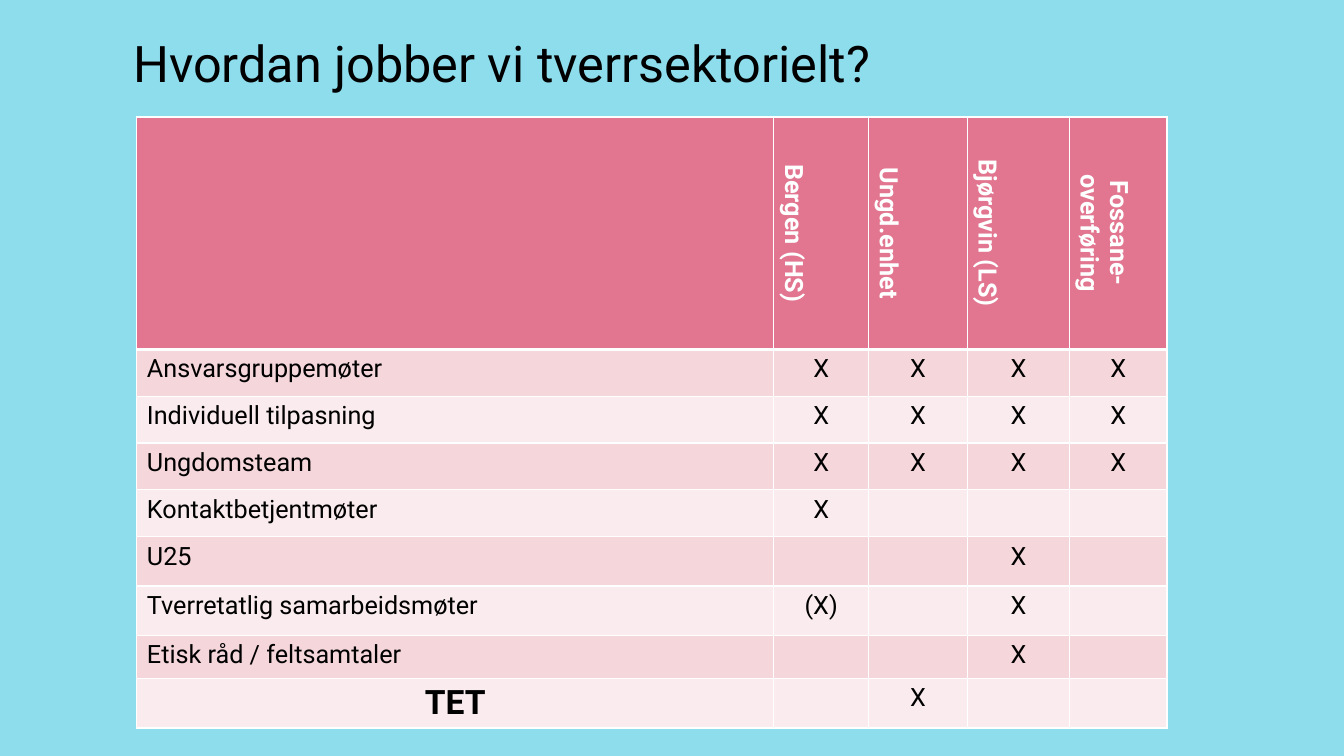
"""Build a slide with a table of cross-sector work by unit."""
from dataclasses import dataclass

from lxml import etree
from pptx import Presentation
from pptx.dml.color import RGBColor
from pptx.enum.text import MSO_ANCHOR, MSO_AUTO_SIZE, PP_ALIGN
from pptx.oxml.ns import qn
from pptx.util import Cm, Pt

LEFT, CENTER = PP_ALIGN.LEFT, PP_ALIGN.CENTER
TOP = MSO_ANCHOR.TOP
NO_AUTOFIT = MSO_AUTO_SIZE.NONE

FONT = "Roboto"
BLACK, WHITE = "000000", "FEFFFF"
BACKGROUND, HEADER = "8EDDED", "E2758F"
BANDS = ("F4D6DB", "FAECEE")
UNITS = ("", "Bergen (HS)", "Ungd.enhet", "Bjørgvin (LS)", "Fossane-overføring")
COLUMN_WIDTHS = (16.05, 2.39, 2.49, 2.57, 2.46)
HEADER_HEIGHT = 4.72


@dataclass
class Measure:
    label: str
    marks: tuple
    height: float = 1.18
    size: int = 18
    bold: bool = False
    align: PP_ALIGN = LEFT


MEASURES = (
    Measure("Ansvarsgruppemøter", ("X",) * 4),
    Measure("Individuell tilpasning", ("X",) * 4),
    Measure("Ungdomsteam", ("X",) * 4),
    Measure("Kontaktbetjentmøter", ("X", "", "", "")),
    Measure("U25", ("", "", "X", ""), 1.24),
    Measure("Tverretatlig samarbeidsmøter", ("(X)", "", "X", ""), 1.24),
    Measure("Etisk råd / feltsamtaler", ("", "", "X", ""), 1.09),
    Measure("TET", ("", "X", "", ""), 1.24, 24, True, CENTER),
)


def color(value: str) -> RGBColor:
    return RGBColor.from_string(value)


def write(tf, text: str, size: int, fill: str, bold: bool, align: PP_ALIGN):
    p = tf.paragraphs[0]
    p.alignment = align
    if text:
        r = p.add_run()
        r.text = text
        for name, value in {"name": FONT, "size": Pt(size), "bold": bold}.items():
            setattr(r.font, name, value)
        r.font.color.rgb = color(fill)
    return p


def add_borders(cell, top: int, bottom: int) -> None:
    tc_pr = cell._tc.get_or_add_tcPr()
    for side, width in {"L": 1, "R": 1, "T": top, "B": bottom}.items():
        line = etree.SubElement(tc_pr, qn(f"a:ln{side}"), w=str(Pt(width)))
        solid = etree.SubElement(line, qn("a:solidFill"))
        etree.SubElement(solid, qn("a:srgbClr"), val=WHITE)


def style_cell(cell, fill: str, top: int = 1, bottom: int = 1) -> None:
    add_borders(cell, top, bottom)
    cell.fill.solid()
    cell.fill.fore_color.rgb = color(fill)


def add_title(s) -> None:
    title = s.shapes.title
    box = {"left": 3.1, "top": 0.86, "width": 26.67, "height": 4.11}
    for name, value in box.items():
        setattr(title, name, Cm(value))
    tf = title.text_frame
    for name, value in {"word_wrap": True, "auto_size": NO_AUTOFIT,
                        "vertical_anchor": TOP}.items():
        setattr(tf, name, value)
    p = write(tf, "Hvordan jobber vi tverrsektorielt?", 36, BLACK, False, LEFT)
    p.line_spacing = 0.89


def add_measures(s) -> None:
    heights = [HEADER_HEIGHT] + [m.height for m in MEASURES]
    frame = s.shapes.add_table(len(heights), len(UNITS), Cm(3.45), Cm(2.95),
                               Cm(sum(COLUMN_WIDTHS)), Cm(sum(heights)))
    table = frame.table
    table.horz_banding = False
    for column, width in zip(table.columns, COLUMN_WIDTHS):
        column.width = Cm(width)
    for row, height in zip(table.rows, heights):
        row.height = Cm(height)

    for col, unit in enumerate(UNITS):
        cell = table.cell(0, col)
        style_cell(cell, HEADER, bottom=3)
        write(cell.text_frame, unit, 18, WHITE, True, CENTER)
        if unit:
            cell._tc.tcPr.set("vert", "vert")

    for row, m in enumerate(MEASURES, 1):
        for col in range(len(UNITS)):
            style_cell(table.cell(row, col), BANDS[(row - 1) % 2], top=3 if row == 1 else 1)
        write(table.cell(row, 0).text_frame, m.label, m.size, BLACK, m.bold, m.align)
        for col, mark in enumerate(m.marks, 1):
            write(table.cell(row, col).text_frame, mark, 18, BLACK, False, CENTER)


def main() -> None:
    prs = Presentation()
    prs.slide_width, prs.slide_height = Cm(33.87), Cm(19.05)
    s = prs.slides.add_slide(prs.slide_layouts[5])
    s.background.fill.solid()
    s.background.fill.fore_color.rgb = color(BACKGROUND)
    add_title(s)
    add_measures(s)
    prs.save("out.pptx")


if __name__ == "__main__":
    main()
